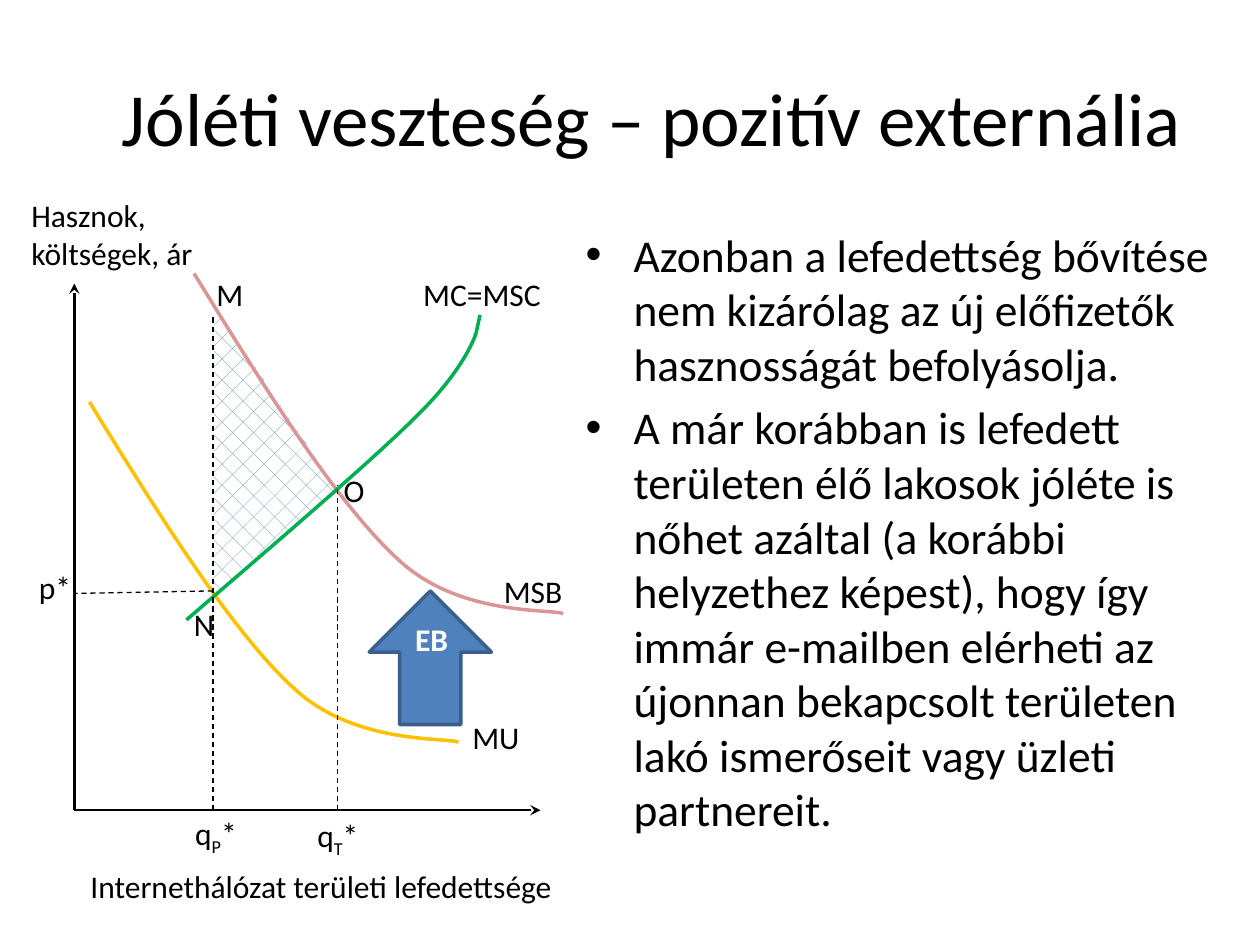
from lxml import etree
from pptx import Presentation
from pptx.dml.color import RGBColor
from pptx.enum import dml, shapes, text
from pptx.oxml.ns import qn
from pptx.util import Inches, Pt

HUE = {"ink": "000000", "white": "FFFFFF", "blue": "4F81BD", "edge": "3A5F8C",
       "msb": "D99694", "mu": "FFC000", "mc": "00B050"}

deck = Presentation()
deck.slide_width, deck.slide_height = Inches(10), Inches(7.5)
slide = deck.slides.add_slide(deck.slide_layouts[5])
parts = slide.shapes


def write(para, words, size=18, hue="ink", bold=False, align=None):
    """Fill a paragraph; words between underscores become subscript."""
    para.alignment = align
    for i, word in enumerate(words.split("_")):
        run = para.add_run()
        run.text = word
        run.font.name, run.font.size, run.font.bold = "Calibri", Pt(size), bold
        run.font.color.rgb = RGBColor.from_string(HUE[hue])
        if i % 2:
            run.font._element.set("baseline", "-25000")


def trace(knots, close=False):
    """Draw an unfilled outline through points given in inches."""
    spots = [(Inches(x), Inches(y)) for x, y in knots]
    pen = parts.build_freeform(*spots[0])
    pen.add_line_segments(spots[1:], close=close)
    form = pen.convert_to_shape()
    form.shadow.inherit = False
    form.fill.background()
    return form


# Title
title = parts.title
title.left, title.top = Inches(0.67), Inches(0.13)
title.width, title.height = Inches(9), Inches(1.59)
title.text_frame.auto_size = text.MSO_AUTO_SIZE.NONE
title.text_frame.vertical_anchor = text.MSO_ANCHOR.MIDDLE
write(title.text_frame.paragraphs[0], "Jóléti veszteség – pozitív externália",
      size=42.9, align=text.PP_ALIGN.CENTER)

# Welfare loss area
loss = trace([(1.7, 2.42), (2.67, 3.88), (1.91, 4.52), (1.69, 4.75)], close=True)
loss.line.fill.background()
loss.fill.patterned()
loss.fill.pattern = dml.MSO_PATTERN.DOTTED_DIAMOND
loss.fill.fore_color.rgb = RGBColor.from_string(HUE["blue"])
loss.fill.back_color.rgb = RGBColor.from_string(HUE["white"])

# Bulleted text
body = parts.add_textbox(Inches(4.55), Inches(1.75), Inches(5.25), Inches(5.48))
body.text_frame.word_wrap = True
points = [
    "Azonban a lefedettség bővítése nem kizárólag az új előfizetők "
    "hasznosságát befolyásolja.",
    "A már korábban is lefedett területen élő lakosok jóléte is nőhet azáltal "
    "(a korábbi helyzethez képest), hogy így immár e-mailben elérheti az "
    "újonnan bekapcsolt területen lakó ismerőseit vagy üzleti partnereit.",
]
for i, point in enumerate(points):
    para = body.text_frame.add_paragraph() if i else body.text_frame.paragraphs[0]
    para.space_before = Pt(5.2)
    write(para, point, size=26)
    props = para._p.get_or_add_pPr()
    props.set("marL", str(Inches(0.38)))
    props.set("indent", str(Inches(-0.38)))
    etree.SubElement(props, qn("a:buFont")).set("typeface", "Arial")
    etree.SubElement(props, qn("a:buChar")).set("char", "•")

# Curves: a start, then cubic pieces (two handles and an end)
drop = [(1.54, 2.17), (2.1, 3.08), (2.67, 3.99), (3.16, 4.44),
        (3.64, 4.89), (4.36, 4.83), (4.47, 4.87)]
rise = [(1.48, 4.92), (2.21, 4.29), (2.95, 3.66), (3.33, 3.28),
        (3.71, 2.9), (3.78, 2.64), (3.78, 2.64), (3.81, 2.5)]
curves = {"msb": drop,
          "mu": [(x - 0.83, y + 1.02) for x, y in drop],
          "mc": rise}
for hue, knots in curves.items():
    form = trace(knots)
    form.line.color.rgb = RGBColor.from_string(HUE[hue])
    form.line.width = Pt(2)
    # Turn each three line pieces into one cubic; a last single one stays straight
    legs = list(form._element.iter(qn("a:lnTo")))
    for k in range(0, len(legs) - 2, 3):
        bend = etree.Element(qn("a:cubicBezTo"))
        legs[k].addprevious(bend)
        for leg in legs[k:k + 3]:
            bend.append(leg[0])
            leg.getparent().remove(leg)

# Axes with arrowheads, then dashed guides
lines = [
    (0.59, 6.43, 0.59, 2.25, True),
    (0.59, 6.43, 4.29, 6.43, True),
    (1.69, 4.69, 0.59, 4.71, False),
    (2.68, 6.43, 2.68, 3.85, False),
    (1.69, 6.43, 1.69, 2.5, False),
]
for *ends, axis in lines:
    rule = parts.add_connector(shapes.MSO_CONNECTOR.STRAIGHT, *map(Inches, ends))
    rule.line.color.rgb = RGBColor.from_string(HUE["ink"])
    rule.line.width = Pt(1.5 if axis else 0.75)
    if axis:
        etree.SubElement(rule.line._get_or_add_ln(), qn("a:tailEnd")).set("type", "stealth")
    else:
        rule.line.dash_style = dml.MSO_LINE.DASH
    etree.SubElement(rule._element.spPr, qn("a:effectLst"))

# External benefit arrow
arrow = parts.add_shape(shapes.MSO_SHAPE.DOWN_ARROW, Inches(2.93), Inches(4.69),
                        Inches(0.97), Inches(1.06))
arrow.rotation = 180
arrow.shadow.inherit = False
arrow.fill.solid()
arrow.fill.fore_color.rgb = RGBColor.from_string(HUE["blue"])
arrow.line.color.rgb = RGBColor.from_string(HUE["edge"])
arrow.line.width = Pt(2)

# Labels: left, top, width, height, words, format
labels = [
    (0.15, 1.51, 2.15, 0.71, "Hasznok, költségek, ár", {}),
    (0.62, 6.83, 4.13, 0.4, "Internethálózat területi lefedettsége", {}),
    (3.65, 5.65, 1.1, 0.4, "MU", {}),
    (3.9, 4.49, 1.1, 0.4, "MSB", {}),
    (3.26, 2.13, 1.22, 0.4, "MC=MSC", {}),
    (0.21, 4.46, 0.71, 0.4, "p*", {}),
    (1.45, 6.41, 0.66, 0.4, "q_P_*", {}),
    (2.42, 6.43, 0.66, 0.4, "q_T_*", {}),
    (1.44, 4.75, 0.47, 0.4, "N", {}),
    (1.62, 2.13, 0.47, 0.4, "M", {}),
    (2.63, 3.69, 0.47, 0.4, "O", {}),
    (3.15, 4.87, 0.55, 0.4, "EB",
     {"hue": "white", "bold": True, "align": text.PP_ALIGN.CENTER}),
]
for *spot, words, style in labels:
    box = parts.add_textbox(*map(Inches, spot))
    box.text_frame.word_wrap = True
    box.text_frame.auto_size = text.MSO_AUTO_SIZE.SHAPE_TO_FIT_TEXT
    write(box.text_frame.paragraphs[0], words, **style)

deck.save("out.pptx")
